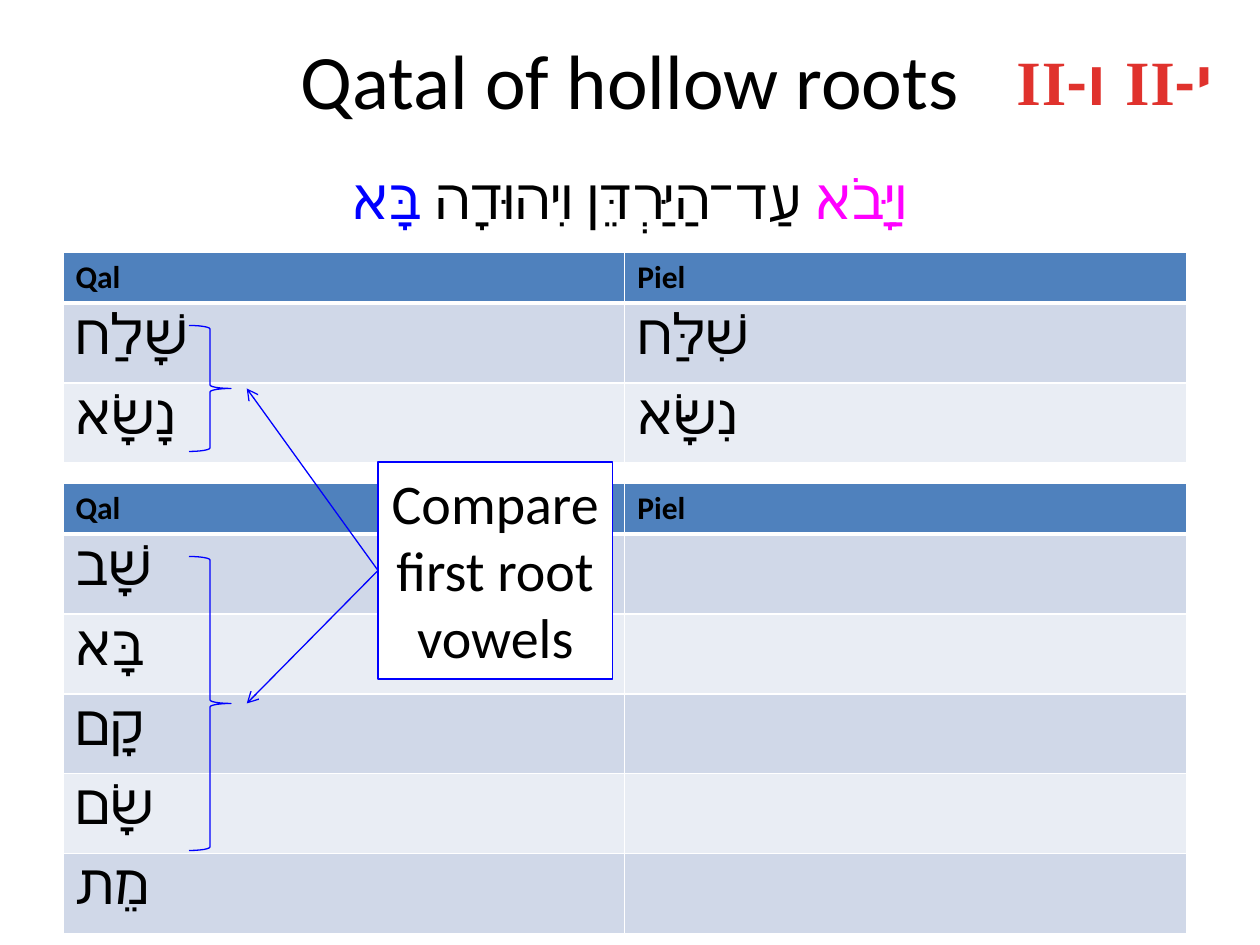
import lxml.etree
import pptx
import pptx.dml.color
import pptx.enum.shapes
import pptx.enum.text
import pptx.oxml.ns
import pptx.util
from dataclasses import dataclass

Pt = pptx.util.Pt
qn = pptx.oxml.ns.qn
PP_ALIGN = pptx.enum.text.PP_ALIGN
ANCHOR = pptx.enum.text.MSO_ANCHOR
AUTO_SIZE = pptx.enum.text.MSO_AUTO_SIZE
SHAPE = pptx.enum.shapes.MSO_SHAPE


@dataclass(frozen=True)
class Theme:
    # Colours
    ink: str = "000000"
    paper: str = "FFFFFF"
    blue: str = "0000FF"
    pink: str = "FF00FF"
    red: str = "E0322D"
    dark_red: str = "A2201C"
    header: str = "4F81BD"
    bands: tuple = ("D0D8E8", "E9EDF4")
    # Fonts and sizes
    latin: str = "Calibri"
    serif: str = "Times New Roman"
    hebrew: str = "Arial"
    title_size: int = 44
    label_size: int = 36
    large_size: int = 32
    header_size: int = 18


def rgb(value):
    return pptx.dml.color.RGBColor.from_string(value)


class GrammarSlide:
    def __init__(self, deck, theme):
        self.theme = theme
        self.slide = deck.slides.add_slide(deck.slide_layouts[1])
        self.shapes = self.slide.shapes

    def place(self, shape, box):
        shape.left, shape.top, shape.width, shape.height = map(Pt, box)

    def run(self, paragraph, text, size, face, color=None, bold=None):
        run = paragraph.add_run()
        run.text = text
        run.font.size = Pt(size)
        run.font.name = face
        run.font.bold = bold
        if color:
            run.font.color.rgb = rgb(color)
        return run

    def title(self, text, box):
        title = self.shapes.title
        self.place(title, box)
        title.text_frame.vertical_anchor = ANCHOR.MIDDLE
        line = title.text_frame.paragraphs[0]
        line.alignment = PP_ALIGN.CENTER
        self.run(line, text, self.theme.title_size, self.theme.latin, self.theme.ink)

    def verse(self, parts, box):
        verse = self.slide.placeholders[1]
        self.place(verse, box)
        line = verse.text_frame.paragraphs[0]
        line.alignment = PP_ALIGN.CENTER
        properties = line._p.get_or_add_pPr()
        for name, value in (("marL", "0"), ("indent", "0"), ("rtl", "1")):
            properties.set(name, value)
        lxml.etree.SubElement(properties, qn("a:buNone"))
        for text, color in parts:
            self.run(line, text, self.theme.large_size, self.theme.hebrew, color)

    def root_label(self, letter, box):
        theme = self.theme
        frame = self.shapes.add_textbox(*map(Pt, box)).text_frame
        frame.word_wrap = False
        frame.auto_size = AUTO_SIZE.SHAPE_TO_FIT_TEXT
        frame.margin_right = 0
        for text, face in (("II", theme.serif), ("-", theme.latin), (letter, theme.hebrew)):
            font = self.run(frame.paragraphs[0], text, theme.label_size, face, bold=True).font
            font._element.set("spc", "50")
            font.fill.gradient()
            font.fill.gradient_angle = 270
            shades = ((0.25, theme.red), (1, theme.dark_red))
            for stop, (position, color) in zip(font.fill.gradient_stops, shades):
                stop.position = position
                stop.color.rgb = rgb(color)

    def header_rule(self, cell):
        rule = lxml.etree.Element(qn("a:lnB"), w=str(Pt(3)))
        fill = lxml.etree.SubElement(rule, qn("a:solidFill"))
        lxml.etree.SubElement(fill, qn("a:srgbClr"), val=self.theme.paper)
        cell._tc.get_or_add_tcPr().insert(0, rule)

    def verb_table(self, rows, left, top, column=321, header_height=29.2, row_height=45.6):
        theme = self.theme
        height = header_height + row_height * len(rows)
        table = self.shapes.add_table(
            len(rows) + 1, 2, Pt(left), Pt(top), Pt(2 * column), Pt(height)).table
        for index, forms in enumerate([("Qal", "Piel")] + rows):
            is_header = index == 0
            table.rows[index].height = Pt(header_height if is_header else row_height)
            fill = theme.header if is_header else theme.bands[(index - 1) % 2]
            size = theme.header_size if is_header else theme.large_size
            face = theme.latin if is_header else theme.hebrew
            for cell, form in zip(table.rows[index].cells, forms):
                cell.fill.solid()
                cell.fill.fore_color.rgb = rgb(fill)
                if is_header:
                    self.header_rule(cell)
                if form:
                    self.run(cell.text_frame.paragraphs[0], form, size, face,
                             theme.ink, is_header)

    def outline(self, kind, box, weight):
        shape = self.shapes.add_shape(kind, *map(Pt, box))
        shape.shadow.inherit = False
        shape.fill.background()
        shape.line.color.rgb = rgb(self.theme.blue)
        shape.line.width = Pt(weight)
        return shape

    def callout(self, lines, box):
        callout = self.outline(SHAPE.RECTANGLE, box, 1)
        callout.fill.solid()
        callout.fill.fore_color.rgb = rgb(self.theme.paper)
        frame = callout.text_frame
        frame.word_wrap = False
        frame.auto_size = AUTO_SIZE.SHAPE_TO_FIT_TEXT
        frame.vertical_anchor = ANCHOR.TOP
        for index, text in enumerate(lines):
            line = frame.add_paragraph() if index else frame.paragraphs[0]
            line.alignment = PP_ALIGN.CENTER
            self.run(line, text, self.theme.large_size, self.theme.latin, self.theme.ink)
        return callout

    def arrow(self, source, side, x, y):
        arrow = self.shapes.add_connector(
            pptx.enum.shapes.MSO_CONNECTOR.STRAIGHT, source.left, source.top, Pt(x), Pt(y))
        arrow.begin_connect(source, side)
        arrow.line.color.rgb = rgb(self.theme.blue)
        arrow.line.width = Pt(0.75)
        head = lxml.etree.SubElement(arrow.line._get_or_add_ln(), qn("a:tailEnd"))
        head.set("type", "arrow")
        lxml.etree.SubElement(arrow._element.spPr, qn("a:effectLst"))


def main():
    deck = pptx.Presentation()
    deck.slide_width, deck.slide_height = Pt(720), Pt(540)
    theme = Theme()
    page = GrammarSlide(deck, theme)

    # Heading, verse and root classes
    page.title("Qatal of hollow roots", (0, 0, 720, 90))
    page.verse([("וַיָּבֹא", theme.pink),
                (" עַד־הַיַּרְדֵּן וִיהוּדָה ", theme.ink),
                ("בָּא", theme.blue)], (0, 90, 720, 65))
    for index, letter in enumerate("וי"):
        page.root_label(letter, (573.8 + 62 * index, 20.9, 65.2, 51))

    # Strong verbs above, hollow verbs below
    page.verb_table([("שָׁלַח", "שִׁלַּח"), ("נָשָׂא", "נִשָּׂא")], 36, 144)
    hollow_verbs = ["שָׁב", "בָּא", "קָם", "שָׂם", "מֵת"]
    page.verb_table([(verb, "") for verb in hollow_verbs], 36, 276)

    # Comparison of the two groups
    comparison = page.callout(["Compare", "first root", "vowels"], (216, 264, 134, 124))
    brace_left, brace_width, arrow_gap = 108, 24, 9
    groups = [(186, 72), (318, 168)]
    for top, height in groups:
        page.outline(SHAPE.RIGHT_BRACE, (brace_left, top, brace_width, height), 0.75)
    for top, height in groups:
        page.arrow(comparison, 1, brace_left + brace_width + arrow_gap, top + height / 2)

    deck.save("out.pptx")


if __name__ == "__main__":
    main()
